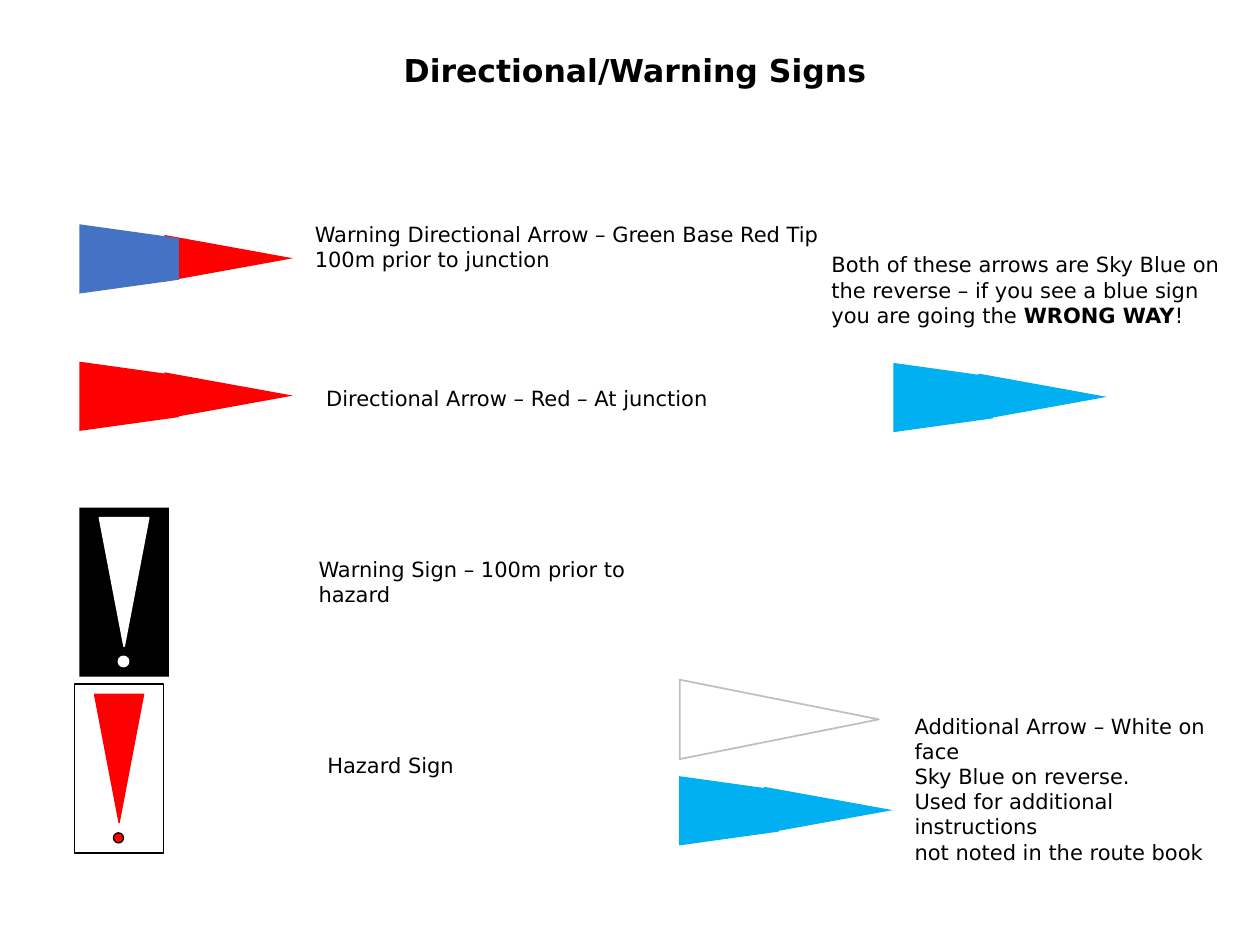
from dataclasses import dataclass

from pptx import Presentation
from pptx.dml.color import RGBColor
from pptx.enum.shapes import MSO_SHAPE
from pptx.enum.text import PP_ALIGN
from pptx.util import Inches, Pt


@dataclass(frozen=True)
class Theme:
    font: str = "DejaVu Sans"
    title_size: int = 18
    body_size: int = 12
    black: str = "000000"
    white: str = "FFFFFF"
    red: str = "FF0000"
    base_blue: str = "4472C4"
    sky_blue: str = "00B0F0"
    grey: str = "BFBFBF"


theme = Theme()


def add_figure(shapes, preset, place, fill, line=None, line_width=1, rotation=0):
    """Add a filled preset shape; place is left, top, width, height in inches."""
    figure = shapes.add_shape(preset, *(Inches(length) for length in place))
    figure.shadow.inherit = False
    figure.rotation = rotation
    figure.fill.solid()
    figure.fill.fore_color.rgb = RGBColor.from_string(fill)
    if line:
        figure.line.color.rgb = RGBColor.from_string(line)
        figure.line.width = Pt(line_width)
    else:
        figure.line.fill.background()


def add_label(place, paragraphs, size=theme.body_size, bold=False, align=PP_ALIGN.LEFT):
    """Add a text box; each paragraph is a list of strings, every second one bold."""
    box = slide.shapes.add_textbox(*(Inches(length) for length in place))
    frame = box.text_frame
    frame.word_wrap = True
    for index, pieces in enumerate(paragraphs):
        para = frame.add_paragraph() if index else frame.paragraphs[0]
        para.alignment = align
        for position, piece in enumerate(pieces):
            span = para.add_run()
            span.text = piece
            span.font.name = theme.font
            span.font.size = Pt(size)
            span.font.bold = bold or position % 2 == 1
            span.font.color.rgb = RGBColor.from_string(theme.black)


deck = Presentation()
deck.slide_width = Inches(10)
deck.slide_height = Inches(7.5)
slide = deck.slides.add_slide(deck.slide_layouts[6])

add_label((0.75, 0.36, 8.58, 0.4), [["Directional/Warning Signs"]],
          theme.title_size, True, PP_ALIGN.CENTER)

# Arrows: left edge, vertical middle, base colour, tip colour
arrows = [
    (0.63, 2.05, theme.base_blue, theme.red),
    (0.63, 3.14, theme.red, theme.red),
    (7.09, 3.15, theme.sky_blue, theme.sky_blue),
    (5.39, 6.43, theme.sky_blue, theme.sky_blue),
]
for left, middle, base_color, tip_color in arrows:
    arrow = slide.shapes.add_group_shape().shapes
    add_figure(arrow, MSO_SHAPE.ISOSCELES_TRIANGLE,
               (left + 1, middle - 0.51, 0.37, 1.02), tip_color, rotation=90)
    add_figure(arrow, MSO_SHAPE.FLOWCHART_MANUAL_OPERATION,
               (left + 0.12, middle - 0.39, 0.55, 0.79), base_color, rotation=270)

add_figure(slide.shapes, MSO_SHAPE.ISOSCELES_TRIANGLE, (5.87, 4.92, 0.63, 1.58),
           theme.white, theme.grey, rotation=90)

# Exclamation signs: left, top, board, board line, mark, dot line, line width
signs = [
    (0.63, 4.03, theme.black, None, theme.white, theme.white, 1),
    (0.59, 5.43, theme.white, theme.black, theme.red, theme.black, 0.75),
]
for left, top, board, board_line, mark, dot_line, width in signs:
    sign = slide.shapes.add_group_shape().shapes
    add_figure(sign, MSO_SHAPE.RECTANGLE, (left, top, 0.71, 1.34),
               board, board_line, width)
    add_figure(sign, MSO_SHAPE.ISOSCELES_TRIANGLE, (left + 0.16, top + 0.08, 0.39, 1.02),
               mark, mark, width, rotation=180)
    add_figure(sign, MSO_SHAPE.OVAL, (left + 0.31, top + 1.18, 0.08, 0.08),
               mark, dot_line, width)

labels = [
    ((2.4, 1.71, 4.88, 0.5), [["Warning Directional Arrow – Green Base Red Tip"],
                              ["100m prior to junction"]]),
    ((2.49, 3.01, 4.88, 0.3), [["Directional Arrow – Red – At junction"]]),
    ((2.43, 4.37, 2.99, 0.5), [["Warning Sign – 100m prior to hazard"]]),
    ((2.5, 5.92, 1.33, 0.3), [["Hazard Sign"]]),
    ((6.5, 1.95, 3.31, 1.31), [["Both of these arrows are Sky Blue on the reverse – "
                                "if you see a blue sign you are going the ",
                                "WRONG WAY", "!"]]),
    ((7.16, 5.61, 2.68, 1.31), [["Additional Arrow – White on face"],
                                ["Sky Blue on reverse."],
                                ["Used for additional instructions"],
                                ["not noted in the route book"]]),
]
for place, paragraphs in labels:
    add_label(place, paragraphs)

deck.save("out.pptx")
